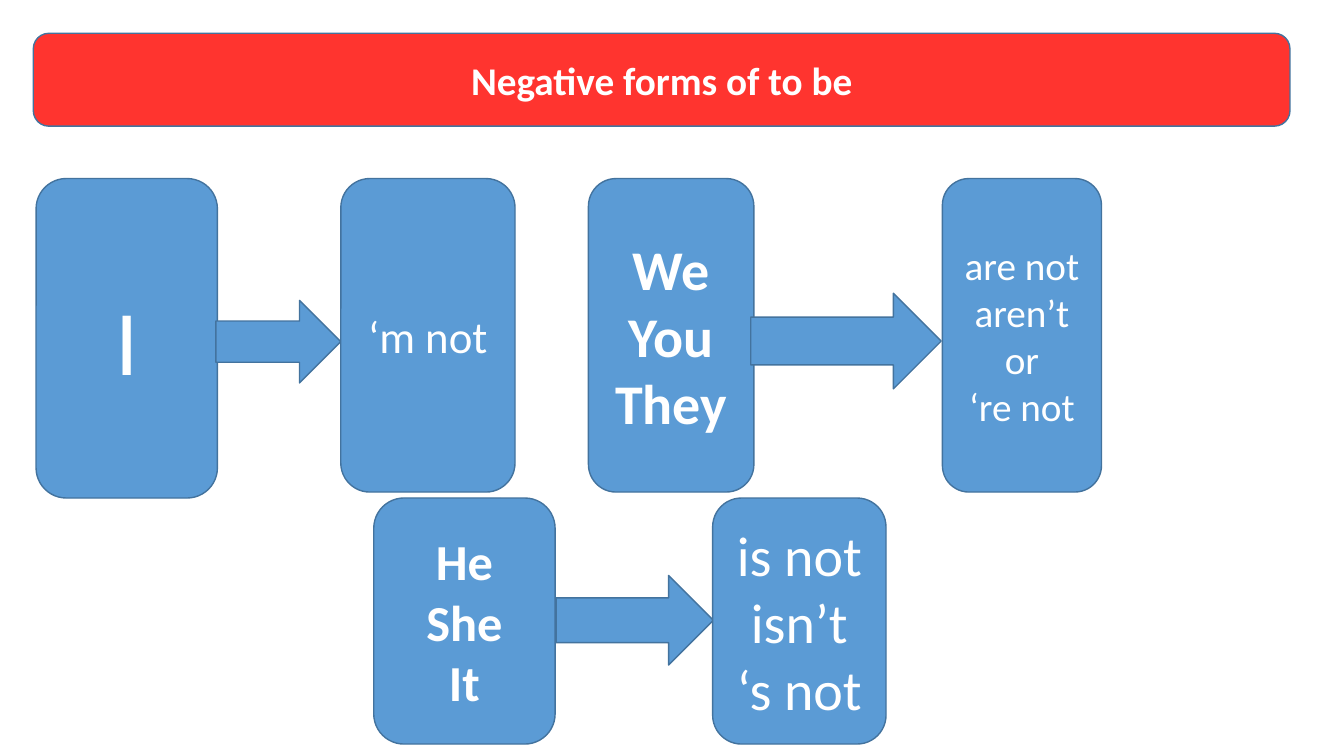
from dataclasses import dataclass

from pptx import Presentation
from pptx.dml.color import RGBColor
from pptx.enum import shapes, text
from pptx.util import Cm, Pt

COLORS = {"title": "FF342F", "card": "5B9BD5", "line": "43739E", "text": "FFFFFF"}
FONT = "Calibri"
TOP_ROW, BOTTOM_ROW = 4.5, 12.55


@dataclass
class Box:
    """Place and size in centimetres."""
    left: float
    top: float
    width: float
    height: float


@dataclass
class Card:
    box: Box
    lines: list[str]
    size: int
    bold: bool = False


@dataclass
class Rule:
    """A pronoun card, an arrow and the negative form it leads to."""
    pronoun: Card
    arrow: Box
    negative: Card


RULES = [
    Rule(Card(Box(0.91, TOP_ROW, 4.57, 8.05), ["I"], 66),
         Box(5.44, 7.57, 3.15, 2.08),
         Card(Box(8.59, TOP_ROW, 4.39, 7.9), ["‘m not"], 32)),
    Rule(Card(Box(14.83, TOP_ROW, 4.17, 7.9), ["We", "You", "They"], 40, True),
         Box(18.92, 7.39, 4.8, 2.41),
         Card(Box(23.75, TOP_ROW, 4.01, 7.9), ["are not aren’t", "or", "‘re not"], 28)),
    Rule(Card(Box(9.42, BOTTOM_ROW, 4.57, 6.2), ["He", "She", "It"], 36, True),
         Box(14.02, 14.5, 3.96, 2.26),
         Card(Box(17.96, BOTTOM_ROW, 4.37, 6.2), ["is not isn’t", "‘s not"], 40)),
]


def add_shape(s, kind, box: Box, fill: str):
    sp = s.shapes.add_shape(kind, Cm(box.left), Cm(box.top), Cm(box.width), Cm(box.height))
    sp.shadow.inherit = False
    sp.fill.solid()
    sp.fill.fore_color.rgb = RGBColor.from_string(COLORS[fill])
    sp.line.color.rgb = RGBColor.from_string(COLORS["line"])
    sp.line.width = Pt(1)
    return sp


def write(tf, lines: list[str], *, size: int, bold: bool = False) -> None:
    tf.word_wrap = True
    tf.vertical_anchor = text.MSO_ANCHOR.MIDDLE
    for i, line in enumerate(lines):
        p = tf.add_paragraph() if i else tf.paragraphs[0]
        p.alignment = text.PP_ALIGN.CENTER
        r = p.add_run()
        r.text = line
        r.font.name = FONT
        r.font.size = Pt(size)
        r.font.bold = bold
        r.font.color.rgb = RGBColor.from_string(COLORS["text"])


def add_card(s, card: Card, fill: str = "card") -> None:
    sp = add_shape(s, shapes.MSO_SHAPE.ROUNDED_RECTANGLE, card.box, fill)
    write(sp.text_frame, card.lines, size=card.size, bold=card.bold)


def main() -> None:
    prs = Presentation()
    prs.slide_width, prs.slide_height = Cm(33.87), Cm(19.05)
    s = prs.slides.add_slide(prs.slide_layouts[6])

    # Title banner
    add_card(s, Card(Box(0.84, 0.84, 31.67, 2.34), ["Negative forms of to be"], 28, True), "title")

    # Pronouns and their negative forms
    for rule in RULES:
        add_card(s, rule.pronoun)
        add_shape(s, shapes.MSO_SHAPE.RIGHT_ARROW, rule.arrow, "card")
        add_card(s, rule.negative)

    prs.save("out.pptx")


if __name__ == "__main__":
    main()
